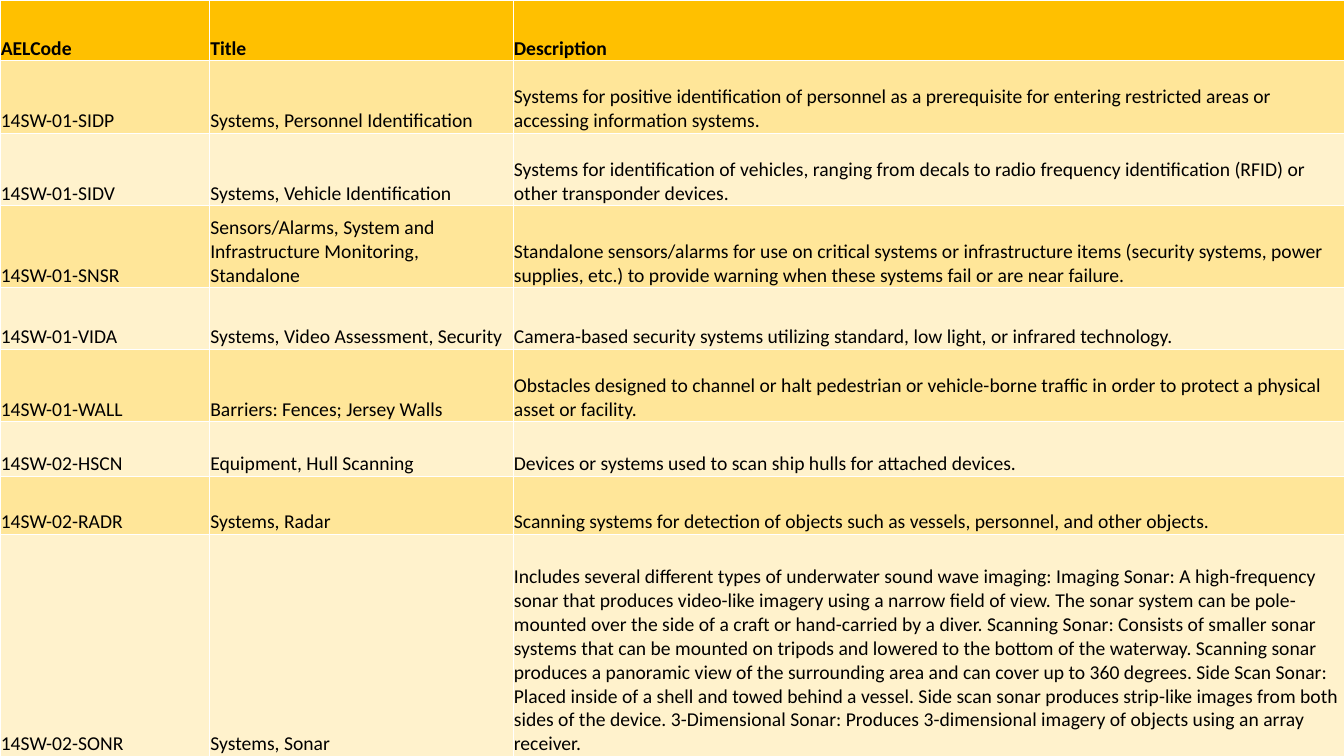
from lxml import etree
from pptx import Presentation
from pptx.dml.color import RGBColor
from pptx.enum.text import MSO_ANCHOR
from pptx.oxml.ns import qn
from pptx.util import Cm, Pt

BOTTOM = MSO_ANCHOR.BOTTOM
BLANK_LAYOUT = 6
SLIDE_WIDTH, SLIDE_HEIGHT = Cm(33.87), Cm(19.05)
FONT, FONT_SIZE = "Calibri", Pt(14)
BLACK, WHITE = "000000", "FFFFFF"
HEADER_FILL = "FFC000"
BAND_FILLS = ("FFF2CC", "FFE699")
INSET = Cm(0.02)
COLUMN_WIDTHS = (5.28, 7.65, 20.94)
ROW_HEIGHTS = (1.52, 1.83, 1.83, 2.06, 1.55, 1.83, 1.37, 1.47, 5.59)

EQUIPMENT = (
    ("AELCode", "Title", "Description"),
    ("14SW-01-SIDP", "Systems, Personnel Identification",
     "Systems for positive identification of personnel as a prerequisite for "
     "entering restricted areas or accessing information systems."),
    ("14SW-01-SIDV", "Systems, Vehicle Identification",
     "Systems for identification of vehicles, ranging from decals to radio "
     "frequency identification (RFID) or other transponder devices."),
    ("14SW-01-SNSR",
     "Sensors/Alarms, System and Infrastructure Monitoring, Standalone",
     "Standalone sensors/alarms for use on critical systems or infrastructure "
     "items (security systems, power supplies, etc.) to provide warning when "
     "these systems fail or are near failure."),
    ("14SW-01-VIDA", "Systems, Video Assessment, Security",
     "Camera-based security systems utilizing standard, low light, or "
     "infrared technology."),
    ("14SW-01-WALL", "Barriers: Fences; Jersey Walls",
     "Obstacles designed to channel or halt pedestrian or vehicle-borne "
     "traffic in order to protect a physical asset or facility."),
    ("14SW-02-HSCN", "Equipment, Hull Scanning",
     "Devices or systems used to scan ship hulls for attached devices."),
    ("14SW-02-RADR", "Systems, Radar",
     "Scanning systems for detection of objects such as vessels, personnel, "
     "and other objects."),
    ("14SW-02-SONR", "Systems, Sonar",
     "Includes several different types of underwater sound wave imaging: "
     "Imaging Sonar: A high-frequency sonar that produces video-like imagery "
     "using a narrow field of view. The sonar system can be pole-mounted over "
     "the side of a craft or hand-carried by a diver. Scanning Sonar: Consists "
     "of smaller sonar systems that can be mounted on tripods and lowered to "
     "the bottom of the waterway. Scanning sonar produces a panoramic view of "
     "the surrounding area and can cover up to 360 degrees. Side Scan Sonar: "
     "Placed inside of a shell and towed behind a vessel. Side scan sonar "
     "produces strip-like images from both sides of the device. 3-Dimensional "
     "Sonar: Produces 3-dimensional imagery of objects using an array "
     "receiver."),
)


def color(hex_code):
    """Return the colour for a hex string."""
    return RGBColor.from_string(hex_code)


def add_borders(cell):
    """Draw a thin white line on each side of a cell."""
    properties = cell._tc.get_or_add_tcPr()
    for side in ("a:lnL", "a:lnR", "a:lnT", "a:lnB"):
        border = etree.SubElement(properties, qn(side), w=str(Pt(0.5)))
        line_fill = etree.SubElement(border, qn("a:solidFill"))
        etree.SubElement(line_fill, qn("a:srgbClr"), val=WHITE)


def write_cell(cell, text, fill, bold):
    """Fill one cell and set its text at the bottom."""
    cell.margin_left = cell.margin_right = cell.margin_top = INSET
    cell.margin_bottom = 0
    cell.vertical_anchor = BOTTOM
    add_borders(cell)
    cell.fill.solid()
    cell.fill.fore_color.rgb = color(fill)
    run = cell.text_frame.paragraphs[0].add_run()
    run.text = text
    run.font.name = FONT
    run.font.size = FONT_SIZE
    run.font.bold = bold
    run.font.color.rgb = color(BLACK)


def add_equipment_table(slide):
    """Add the banded equipment table over the whole slide."""
    table = slide.shapes.add_table(
        len(EQUIPMENT), len(COLUMN_WIDTHS), 0, 0, SLIDE_WIDTH, SLIDE_HEIGHT
    ).table
    for column, width in zip(table.columns, COLUMN_WIDTHS):
        column.width = Cm(width)
    for row, height in zip(table.rows, ROW_HEIGHTS):
        row.height = Cm(height)
    for row_index, entry in enumerate(EQUIPMENT):
        is_header = row_index == 0
        fill = HEADER_FILL if is_header else BAND_FILLS[row_index % 2]
        for column_index, text in enumerate(entry):
            write_cell(table.cell(row_index, column_index), text, fill, is_header)


def main():
    """Build and save the equipment slide."""
    presentation = Presentation()
    presentation.slide_width = SLIDE_WIDTH
    presentation.slide_height = SLIDE_HEIGHT
    slide = presentation.slides.add_slide(presentation.slide_layouts[BLANK_LAYOUT])
    add_equipment_table(slide)
    presentation.save("out.pptx")


if __name__ == "__main__":
    main()
